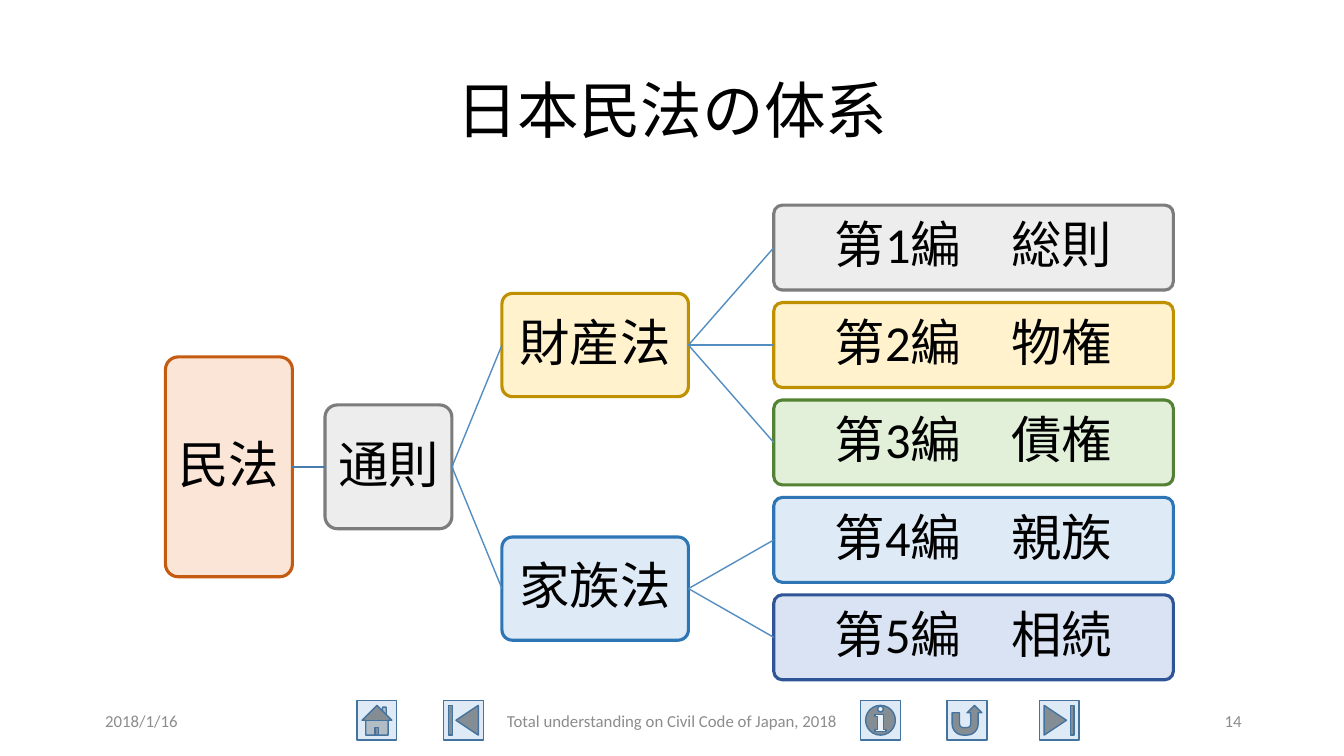
from lxml import etree
from pptx import Presentation
from pptx import util as u
from pptx.dml import color
from pptx.enum import shapes, text
from pptx.oxml import ns

COLORS = {
    "black": "000000", "footer": "8C8C8C",
    "root_link": "497CAB", "link": "538DC1",
    "button": "DEEBF7", "button_line": "43739E",
    "orange": "FBE5D6", "orange_line": "C55A11",
    "gray": "EDEDED", "gray_line": "7C7C7C",
    "yellow": "FFF2CC", "yellow_line": "BF9000",
    "green": "E2F0D9", "green_line": "548235",
    "blue": "DEEBF7", "blue_line": "2E75B6",
    "indigo": "DAE3F3", "indigo_line": "2F5597",
}


def add_box(preset, left, top, width, height, hue, line_width):
    shape = slide.shapes.add_shape(preset, u.Cm(left), u.Cm(top), u.Cm(width), u.Cm(height))
    shape.shadow.inherit = False
    shape.fill.solid()
    shape.fill.fore_color.rgb = color.RGBColor.from_string(COLORS[hue])
    shape.line.color.rgb = color.RGBColor.from_string(COLORS[hue + "_line"])
    shape.line.width = u.Pt(line_width)
    return shape


def write(shape, words, size, hue, alignment, spacing=1.0):
    frame = shape.text_frame
    frame.word_wrap = True
    frame.vertical_anchor = text.MSO_ANCHOR.MIDDLE
    paragraph = frame.paragraphs[0]
    paragraph.alignment = alignment
    paragraph.line_spacing = spacing
    run = paragraph.add_run()
    run.text = words
    run.font.name = "Calibri"
    run.font.size = u.Pt(size)
    run.font.color.rgb = color.RGBColor.from_string(COLORS[hue])


presentation = Presentation()
presentation.slide_width = u.Cm(33.87)
presentation.slide_height = u.Cm(19.05)
slide = presentation.slides.add_slide(presentation.slide_layouts[5])

LEFT, CENTER, RIGHT = text.PP_ALIGN.LEFT, text.PP_ALIGN.CENTER, text.PP_ALIGN.RIGHT
PRESET = shapes.MSO_SHAPE

title = slide.shapes.title
title.left, title.top, title.width, title.height = u.Cm(2.33), u.Cm(1.01), u.Cm(29.21), u.Cm(3.68)
write(title, "日本民法の体系", 44, "black", CENTER, 0.9)

buttons = [
    (PRESET.ACTION_BUTTON_HOME, 9.0),
    (PRESET.ACTION_BUTTON_BEGINNING, 11.18),
    (PRESET.ACTION_BUTTON_INFORMATION, 21.69),
    (PRESET.ACTION_BUTTON_RETURN, 23.87),
    (PRESET.ACTION_BUTTON_END, 26.19),
]
for preset, left in buttons:
    add_box(preset, left, 17.65, 1, 1, "button", 1)

columns = [(4.17, 3.2, 5.54), (8.19, 3.2, 3.12), (12.65, 4.7, 2.6), (19.5, 10.07, 2.14)]
first_center, pitch = 6.24, 2.455
nodes = [
    ("民法", 0, 2.25, "orange", None),
    ("通則", 1, 2.25, "gray", "民法"),
    ("財産法", 2, 1, "yellow", "通則"),
    ("家族法", 2, 3.5, "blue", "通則"),
    ("第1編　総則", 3, 0, "gray", "財産法"),
    ("第2編　物権", 3, 1, "yellow", "財産法"),
    ("第3編　債権", 3, 2, "green", "財産法"),
    ("第4編　親族", 3, 3, "blue", "家族法"),
    ("第5編　相続", 3, 4, "indigo", "家族法"),
]
right_site, left_site = 3, 1
boxes = {}
for name, level, row, hue, parent in nodes:
    left, width, height = columns[level]
    top = first_center + row * pitch - height / 2
    box = add_box(PRESET.ROUNDED_RECTANGLE, left, top, width, height, hue, 2.25)
    box.adjustments[0] = 0.1
    frame = box.text_frame
    frame.margin_left = frame.margin_right = frame.margin_top = frame.margin_bottom = u.Cm(0.08)
    write(box, name, 36, "black", CENTER, 0.9)
    boxes[name] = box
    if parent:
        link = slide.shapes.add_connector(shapes.MSO_CONNECTOR.STRAIGHT, 0, 0, 0, 0)
        link.begin_connect(boxes[parent], right_site)
        link.end_connect(box, left_site)
        link_hue = "root_link" if level == 1 else "link"
        link.line.color.rgb = color.RGBColor.from_string(COLORS[link_hue])
        link.line.width = u.Pt(1)
        etree.SubElement(link._element.spPr, ns.qn("a:effectLst"))

footers = [
    ("2018/1/16", 2.4, 7.62, LEFT),
    ("Total understanding on Civil Code of Japan, 2018", 11.22, 11.43, CENTER),
    ("14", 23.92, 7.62, RIGHT),
]
for words, left, width, alignment in footers:
    footer = slide.shapes.add_textbox(u.Cm(left), u.Cm(17.67), u.Cm(width), u.Cm(1.01))
    write(footer, words, 12, "footer", alignment)

presentation.save("out.pptx")
